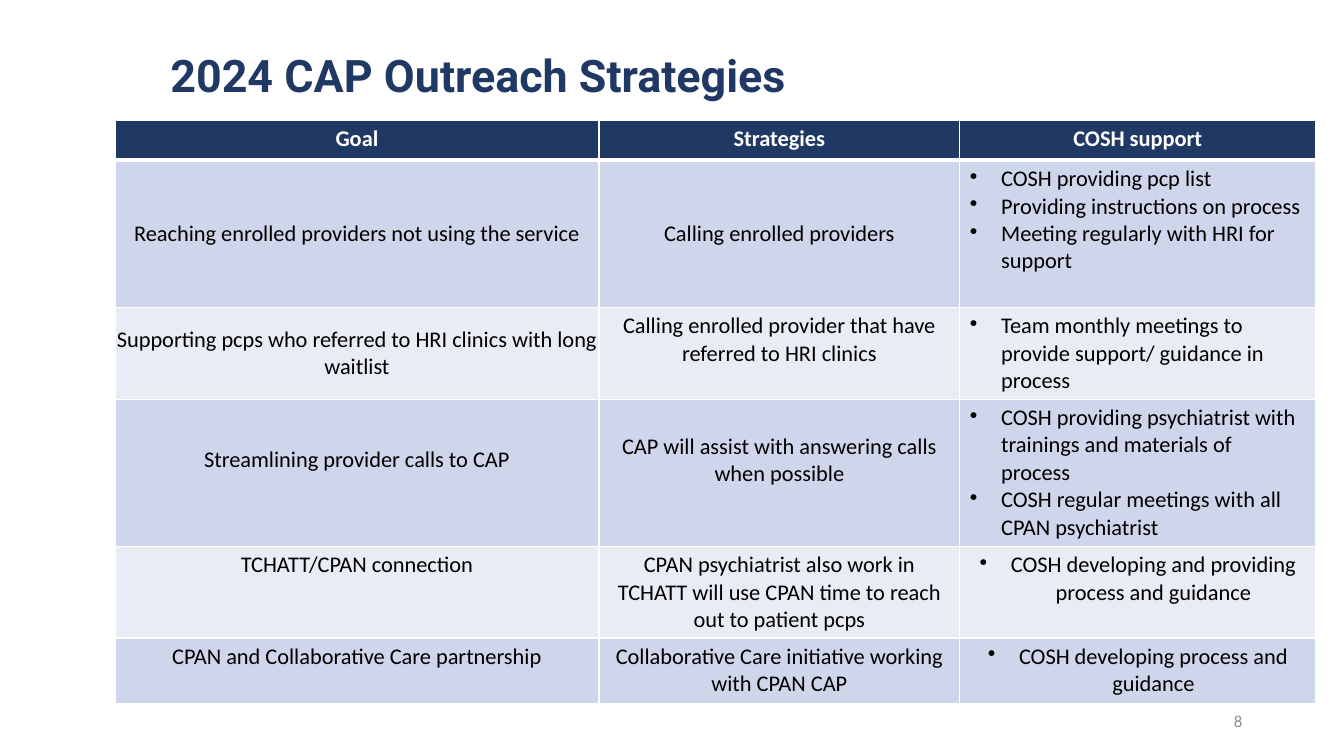
import pptx
import pptx.util
import pptx.dml.color
import pptx.enum.text
import pptx.oxml.ns
from lxml import etree

Inch = pptx.util.Inches
Align = pptx.enum.text.PP_ALIGN
Anchor = pptx.enum.text.MSO_ANCHOR
WIDE, HIGH = 13.33, 7.5
NAVY, WHITE, BLACK, GREY = "203864", "FFFFFF", "000000", "8C8C8C"
BANDS = ["CFD5EA", "E9EBF5"]
COLS = [4.8, 3.58, 3.53]
ROWS = [0.4, 1.46, 0.91, 1.46, 0.91, 0.65]
HEADS = ["Goal", "Strategies", "COSH support"]
PLANS = [
    ("Reaching enrolled providers not using the service",
     "Calling enrolled providers",
     ["COSH providing pcp list",
      "Providing instructions on process",
      "Meeting regularly with HRI for support"]),
    ("Supporting pcps who referred to HRI clinics with long waitlist",
     "Calling enrolled provider that have referred to HRI clinics",
     ["Team monthly meetings to provide support/ guidance in process"]),
    ("Streamlining provider calls to CAP",
     "CAP will assist with answering calls when possible",
     ["COSH providing psychiatrist with trainings and materials of process",
      "COSH regular meetings with all CPAN psychiatrist"]),
    ("TCHATT/CPAN connection",
     "CPAN psychiatrist also work in TCHATT will use CPAN time to reach "
     "out to patient pcps",
     ["COSH developing and providing process and guidance"]),
    ("CPAN and Collaborative Care partnership",
     "Collaborative Care initiative working with CPAN CAP",
     ["COSH developing process and guidance"]),
]
MIDDLE = {(1, 0), (2, 0), (3, 0), (1, 1), (3, 1)}
RAISED = {(3, 0), (3, 1)}


def tint(code):
    return pptx.dml.color.RGBColor.from_string(code)


def apply(item, looks):
    for name, value in looks.items():
        setattr(item, name, value)


def style(para, size, color, bold=False, face="Calibri"):
    apply(para.font, {"size": pptx.util.Pt(size), "bold": bold, "name": face})
    para.font.color.rgb = tint(color)


def place(shape, box):
    apply(shape, dict(zip(("left", "top", "width", "height"), map(Inch, box))))


def bullet(para):
    props = para._p.get_or_add_pPr()
    props.set("marL", str(Inch(0.31)))
    props.set("indent", str(-Inch(0.31)))
    mark = etree.SubElement(props, pptx.oxml.ns.qn("a:buChar"))
    mark.set("char", "•")


def edge(cell, side, points):
    qn = pptx.oxml.ns.qn
    line = etree.SubElement(cell._tc.get_or_add_tcPr(), qn("a:" + side))
    line.set("w", str(pptx.util.Pt(points)))
    fill = etree.SubElement(line, qn("a:solidFill"))
    etree.SubElement(fill, qn("a:srgbClr")).set("val", WHITE)


def dress(cell, row, col):
    """Set the borders, fill, margins and anchor of one cell."""
    for side in ("lnL", "lnR", "lnT", "lnB"):
        thick = (row, side) in ((0, "lnB"), (1, "lnT"))
        edge(cell, side, 3 if thick else 1)
    cell.fill.solid()
    cell.fill.fore_color.rgb = tint(BANDS[(row - 1) % 2] if row else NAVY)
    gap = Inch(0.1 if col else 0.01)
    mid = (row, col) in MIDDLE
    rise = 0.25 if (row, col) in RAISED else 0
    apply(cell, {
        "margin_left": gap, "margin_right": gap,
        "margin_top": Inch(0 if mid else 0.05),
        "margin_bottom": Inch(rise if mid else 0.05),
        "vertical_anchor": Anchor.MIDDLE if mid else Anchor.TOP})


def write(cell, row, col, text):
    listed = isinstance(text, list)
    frame = cell.text_frame
    frame.text = "\n".join(text) if listed else text
    for para in frame.paragraphs:
        para.alignment = Align.LEFT if listed and row < 4 else Align.CENTER
        if listed:
            bullet(para)
        style(para, 16, BLACK if row else WHITE, bold=row == 0)


def title(slide, box):
    head = slide.shapes.title
    place(head, box)
    frame = head.text_frame
    frame.text = "2024 CAP Outreach Strategies"
    apply(frame, {"vertical_anchor": Anchor.TOP, "word_wrap": True,
                  "auto_size": pptx.enum.text.MSO_AUTO_SIZE.NONE})
    para = frame.paragraphs[0]
    apply(para, {"alignment": Align.LEFT, "line_spacing": 0.9})
    style(para, 32, NAVY, True, "Roboto")


def grid(slide, box):
    table = slide.shapes.add_table(
        len(ROWS), len(COLS), *map(Inch, box)).table
    for column, share in zip(table.columns, COLS):
        column.width = Inch(box[2] * share / sum(COLS))
    for line, share in zip(table.rows, ROWS):
        line.height = Inch(box[3] * share / sum(ROWS))
    for row, texts in enumerate([HEADS, *PLANS]):
        for col, text in enumerate(texts):
            cell = table.cell(row, col)
            dress(cell, row, col)
            write(cell, row, col, text)


def number(slide, box):
    frame = slide.shapes.add_textbox(*map(Inch, box)).text_frame
    frame.text = "8"
    apply(frame, {"word_wrap": True, "vertical_anchor": Anchor.MIDDLE})
    para = frame.paragraphs[0]
    para.alignment = Align.RIGHT
    style(para, 12, GREY)


def main():
    deck = pptx.Presentation()
    apply(deck, {"slide_width": Inch(WIDE), "slide_height": Inch(HIGH)})
    slide = deck.slides.add_slide(deck.slide_layouts[5])
    title(slide, (1.59, 0.48, 11.12, 1.42))
    number(slide, (9.42, 6.95, 3, 0.4))
    grid(slide, (1.14, 1.19, sum(COLS), sum(ROWS)))
    deck.save("out.pptx")


if __name__ == "__main__":
    main()
